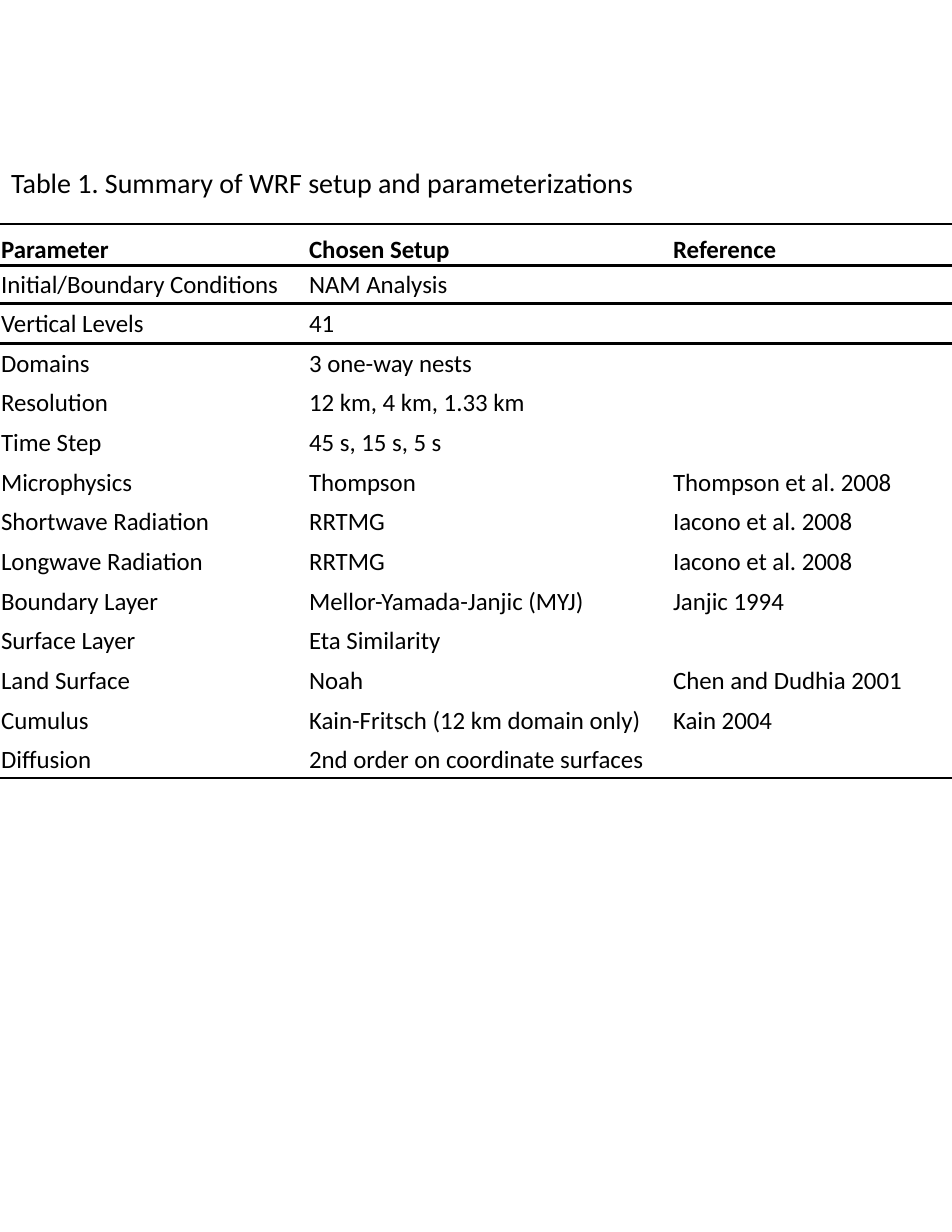
"""Build a one-page table of the WRF model setup."""
from dataclasses import dataclass

from lxml.etree import SubElement
from pptx import Presentation
from pptx.dml.color import RGBColor
from pptx.enum.text import MSO_ANCHOR, MSO_AUTO_SIZE, PP_ALIGN
from pptx.oxml.ns import qn
from pptx.slide import Slide
from pptx.table import _Cell
from pptx.text.text import _Paragraph
from pptx.util import Inches, Pt

BLACK = RGBColor(0, 0, 0)
FONT = "Calibri"
PLAIN_STYLE = "{2D5ABB26-0587-4C30-8999-92F81FD0307C}"
TITLE = "Table 1. Summary of WRF setup and parameterizations"
WIDTHS = (2.75, 3.25, 2.5)
HEIGHT, HEAD, SHORT = 4.95, 0.37, 0.34


@dataclass(frozen=True)
class Entry:
    label: str
    setup: str
    source: str = ""


ENTRIES = (
    Entry("Parameter", "Chosen Setup", "Reference"),
    Entry("Initial/Boundary Conditions", "NAM Analysis"),
    Entry("Vertical Levels", "41"),
    Entry("Domains", "3 one-way nests"),
    Entry("Resolution", "12 km, 4 km, 1.33 km"),
    Entry("Time Step", "45 s, 15 s, 5 s"),
    Entry("Microphysics", "Thompson", "Thompson et al. 2008"),
    Entry("Shortwave Radiation", "RRTMG", "Iacono et al. 2008"),
    Entry("Longwave Radiation", "RRTMG", "Iacono et al. 2008"),
    Entry("Boundary Layer", "Mellor-Yamada-Janjic (MYJ)", "Janjic 1994"),
    Entry("Surface Layer", "Eta Similarity"),
    Entry("Land Surface", "Noah", "Chen and Dudhia 2001"),
    Entry("Cumulus", "Kain-Fritsch (12 km domain only)", "Kain 2004"),
    Entry("Diffusion", "2nd order on coordinate surfaces"),
)
RULES = {0: 1, 1: 2.25, 2: 2.25, len(ENTRIES): 1}


def add_text(para: _Paragraph, text: str, size: float, bold: bool = False) -> None:
    run = para.add_run()
    run.text = text
    run.font.name = FONT
    run.font.size = Pt(size)
    run.font.bold = bold
    run.font.color.rgb = BLACK


def add_rule(cell: _Cell, side: str, width: float) -> None:
    props = cell._tc.get_or_add_tcPr()
    line = SubElement(props, qn(f"a:{side}"), w=str(Pt(width)))
    fill = SubElement(line, qn("a:solidFill"))
    SubElement(fill, qn("a:srgbClr"), val=str(BLACK))


def fill_cell(cell: _Cell, row: int, text: str) -> None:
    cell.margin_left = cell.margin_right = cell.margin_top = Inches(0.01)
    cell.margin_bottom = 0
    cell.vertical_anchor = MSO_ANCHOR.MIDDLE if row else MSO_ANCHOR.BOTTOM
    for side, edge in (("lnT", row), ("lnB", row + 1)):
        if edge in RULES:
            add_rule(cell, side, RULES[edge])
    cell.fill.background()
    para = cell.text_frame.paragraphs[0]
    if text:
        add_text(para, text, 16, bold=row == 0)
    else:
        para.font.size = Pt(16)


def add_title(slide: Slide) -> None:
    title = slide.shapes.title
    title.left, title.top = Inches(-0.01), Inches(1.42)
    title.width, title.height = Inches(8.52), Inches(0.42)
    frame = title.text_frame
    frame.word_wrap = True
    frame.auto_size = MSO_AUTO_SIZE.SHAPE_TO_FIT_TEXT
    frame.vertical_anchor = MSO_ANCHOR.TOP
    frame.margin_left = frame.margin_right = Inches(0.11)
    frame.margin_top = frame.margin_bottom = Inches(0.06)
    para = frame.paragraphs[0]
    para.alignment = PP_ALIGN.LEFT
    add_text(para, TITLE, 18)


def add_grid(slide: Slide) -> None:
    count = len(ENTRIES)
    table = slide.shapes.add_table(
        count, len(WIDTHS), 0, Inches(2), Inches(sum(WIDTHS)), Inches(HEIGHT)
    ).table
    table.first_row = table.horz_banding = False
    table._tbl.tblPr.find(qn("a:tableStyleId")).text = PLAIN_STYLE
    for column, width in zip(table.columns, WIDTHS):
        column.width = Inches(width)
    pitch = (HEIGHT - HEAD - 2 * SHORT) / (count - 3)
    heights = [HEAD, SHORT, *[pitch] * (count - 3), SHORT]
    for row, (entry, height) in enumerate(zip(ENTRIES, heights)):
        table.rows[row].height = Inches(height)
        for col, text in enumerate((entry.label, entry.setup, entry.source)):
            fill_cell(table.cell(row, col), row, text)


def main() -> None:
    deck = Presentation()
    deck.slide_width, deck.slide_height = Inches(8.5), Inches(11)
    slide = deck.slides.add_slide(deck.slide_layouts[5])
    add_title(slide)
    add_grid(slide)
    deck.save("out.pptx")


if __name__ == "__main__":
    main()
